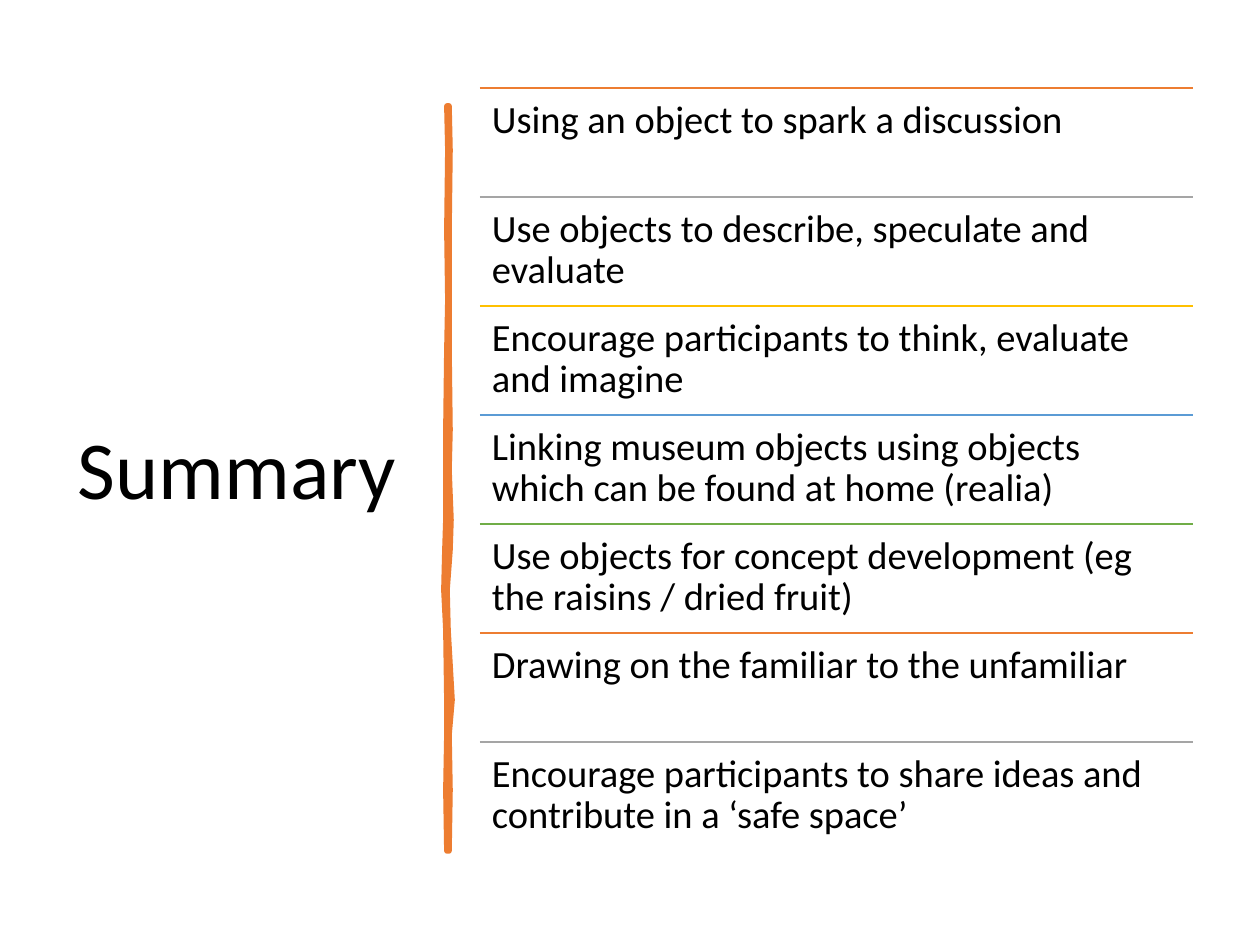
from dataclasses import dataclass

from lxml import etree
from pptx import Presentation
from pptx.dml.color import RGBColor
from pptx.enum.shapes import MSO_CONNECTOR
from pptx.enum.text import MSO_ANCHOR
from pptx.oxml.ns import qn
from pptx.slide import Slide
from pptx.util import Emu, Pt

STRAIGHT = MSO_CONNECTOR.STRAIGHT
TOP = MSO_ANCHOR.TOP
MIDDLE = MSO_ANCHOR.MIDDLE

EMU_PER_PX = 914400 / 126
FONT = "Calibri"

BLACK = RGBColor(0x00, 0x00, 0x00)
WHITE = RGBColor(0xFF, 0xFF, 0xFF)
ORANGE = RGBColor(0xED, 0x7D, 0x31)
GRAY = RGBColor(0xA5, 0xA5, 0xA5)
YELLOW = RGBColor(0xFF, 0xC0, 0x00)
BLUE = RGBColor(0x5B, 0x9B, 0xD5)
GREEN = RGBColor(0x70, 0xAD, 0x47)
RULE_COLORS = [ORANGE, GRAY, YELLOW, BLUE, GREEN]

LIST_LEFT, LIST_TOP = 480, 88
LIST_WIDTH, ROW_HEIGHT = 713, 109

POINTS = [
    "Using an object to spark a discussion",
    "Use objects to describe, speculate and evaluate",
    "Encourage participants to think, evaluate and imagine",
    "Linking museum objects using objects which can be found at home (realia)",
    "Use objects for concept development (eg the raisins / dried fruit)",
    "Drawing on the familiar to the unfamiliar",
    "Encourage participants to share ideas and contribute in a ‘safe space’",
]


@dataclass
class Box:
    left: int
    top: int
    width: int
    height: int


@dataclass
class StrokeSlice:
    y: int
    left: int
    right: int


BRUSH_STROKE = [
    StrokeSlice(106, 447, 449),
    StrokeSlice(150, 448, 450),
    StrokeSlice(230, 447, 449),
    StrokeSlice(300, 448, 449),
    StrokeSlice(350, 447, 449),
    StrokeSlice(430, 446, 450),
    StrokeSlice(470, 446, 449),
    StrokeSlice(520, 446, 451),
    StrokeSlice(550, 445, 450),
    StrokeSlice(590, 444, 447),
    StrokeSlice(630, 446, 448),
    StrokeSlice(700, 447, 452),
    StrokeSlice(735, 447, 449),
    StrokeSlice(790, 446, 450),
    StrokeSlice(851, 447, 449),
]


def px(n: int) -> Emu:
    return Emu(round(n * EMU_PER_PX))


def add_text(s: Slide, box: Box, text: str, size: int, inset: int,
             anchor: MSO_ANCHOR) -> None:
    sp = s.shapes.add_textbox(px(box.left), px(box.top),
                              px(box.width), px(box.height))
    tf = sp.text_frame
    tf.word_wrap = True
    tf.vertical_anchor = anchor
    tf.margin_left = tf.margin_right = px(inset)
    tf.margin_top = tf.margin_bottom = px(inset)
    p = tf.paragraphs[0]
    p.line_spacing = 0.9
    r = p.add_run()
    r.text = text
    r.font.name = FONT
    r.font.size = Pt(size)
    r.font.color.rgb = BLACK


def add_rule(s: Slide, left: int, top: int, width: int,
             color: RGBColor) -> None:
    line = s.shapes.add_connector(STRAIGHT, px(left), px(top),
                                  px(left + width), px(top))
    line.line.color.rgb = color
    line.line.width = Pt(1)
    etree.SubElement(line._element.spPr, qn("a:effectLst"))


def add_brush_stroke(s: Slide, slices: list[StrokeSlice]) -> None:
    right = [(c.right, c.y) for c in slices]
    left = [(c.left, c.y) for c in reversed(slices)]
    start, *rest = right + left
    builder = s.shapes.build_freeform(*start, scale=EMU_PER_PX)
    builder.add_line_segments(rest, close=True)
    sp = builder.convert_to_shape()
    sp.shadow.inherit = False
    sp.fill.solid()
    sp.fill.fore_color.rgb = ORANGE
    sp.line.color.rgb = ORANGE
    sp.line.width = Pt(3.25)


def main() -> None:
    prs = Presentation()
    prs.slide_width, prs.slide_height = px(1260), px(945)
    s = prs.slides.add_slide(prs.slide_layouts[6])
    s.background.fill.solid()
    s.background.fill.fore_color.rgb = WHITE

    add_text(s, Box(66, 88, 353, 770), "Summary", 47, 12, MIDDLE)
    add_brush_stroke(s, BRUSH_STROKE)
    for i, point in enumerate(POINTS):
        top = LIST_TOP + i * ROW_HEIGHT
        add_rule(s, LIST_LEFT, top, LIST_WIDTH,
                 RULE_COLORS[i % len(RULE_COLORS)])
        add_text(s, Box(LIST_LEFT, top, LIST_WIDTH, ROW_HEIGHT),
                 point, 22, 12, TOP)

    prs.save("out.pptx")


if __name__ == "__main__":
    main()
